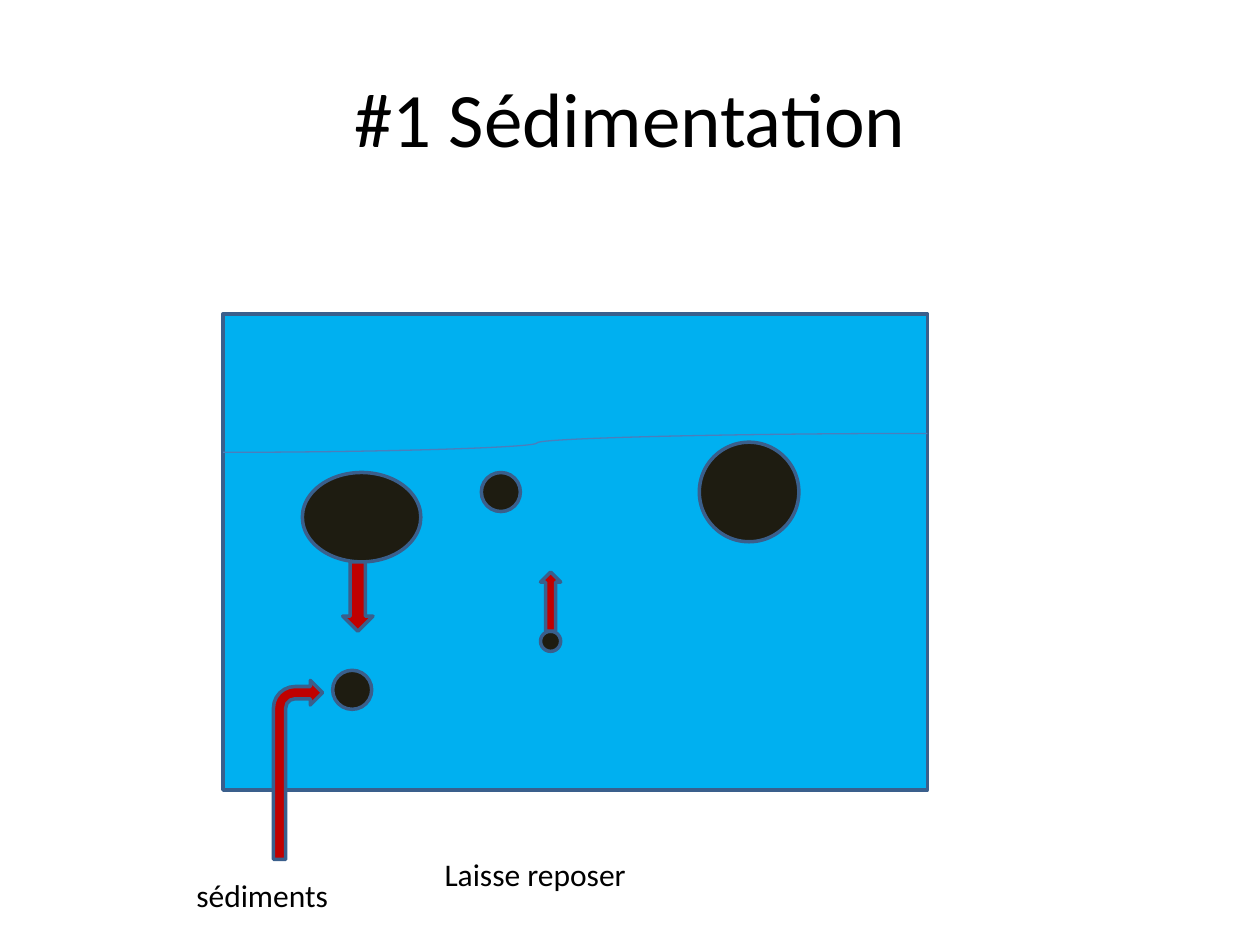
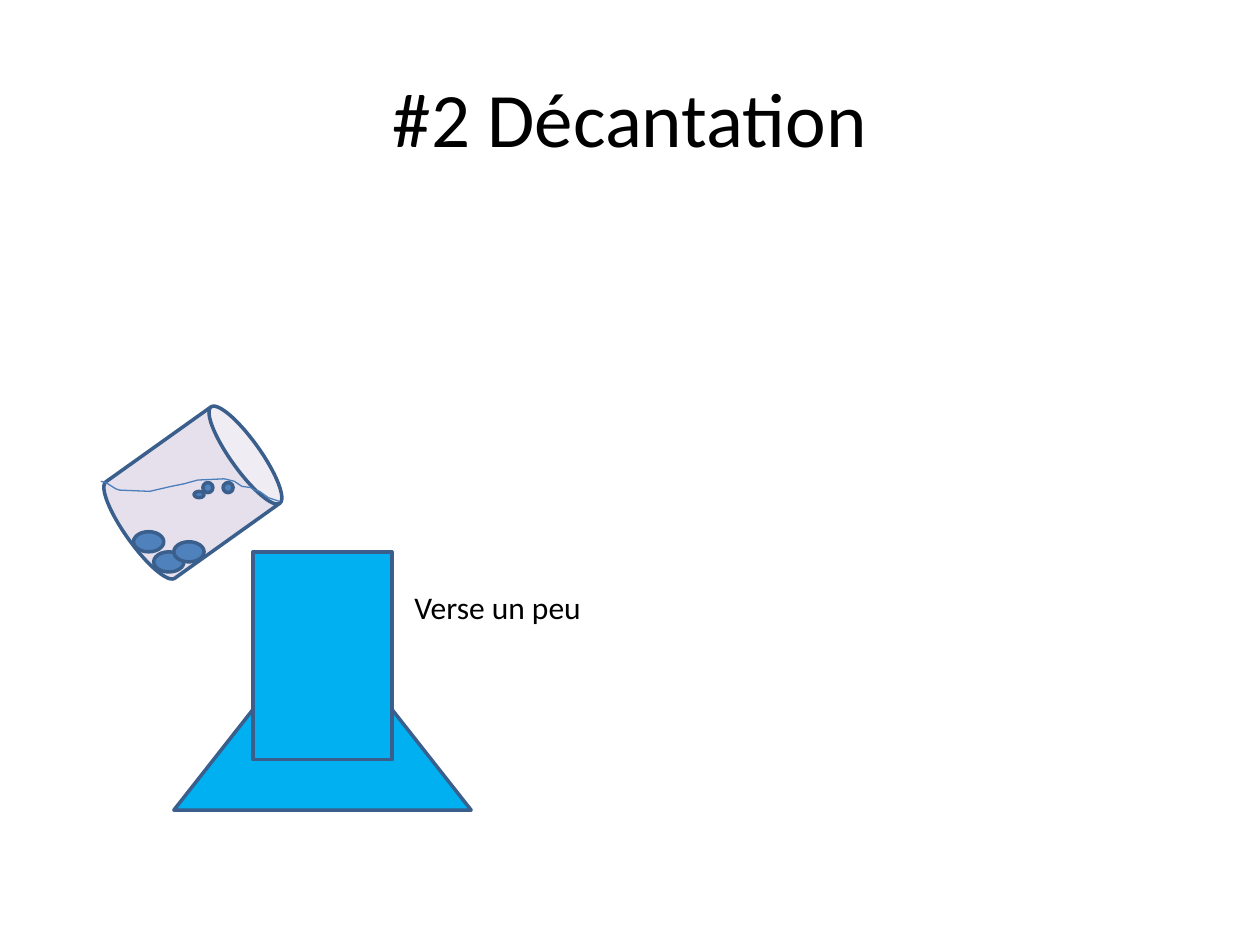
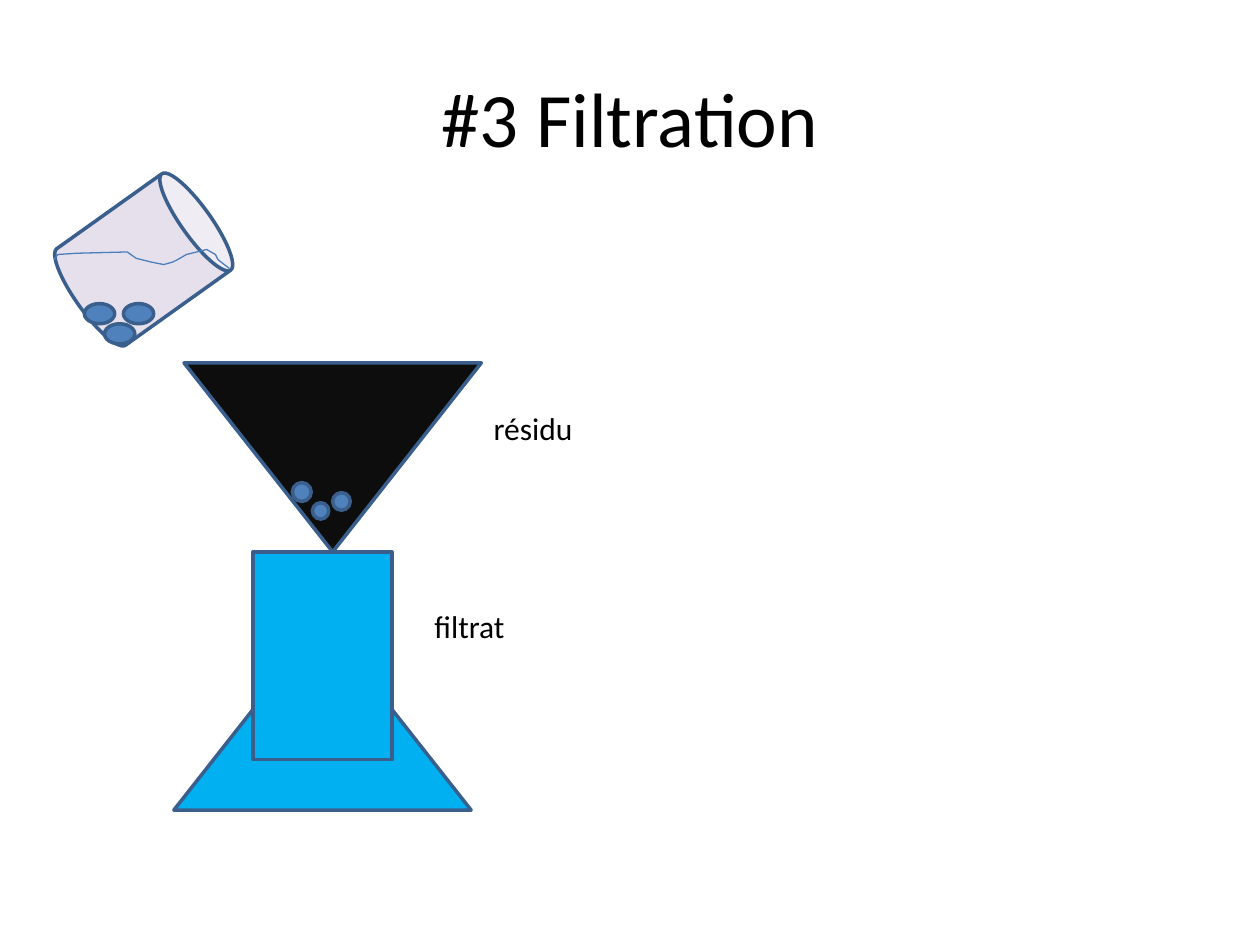
from lxml.etree import SubElement
from pptx import Presentation
from pptx.dml.color import RGBColor as RGB
from pptx.enum.shapes import MSO_CONNECTOR as Link, MSO_SHAPE as Form
from pptx.enum.text import MSO_ANCHOR as Anchor, MSO_AUTO_SIZE as Fit, PP_ALIGN as Align
from pptx.oxml.ns import qn
from pptx.util import Inches, Pt

INK = {"text": "000000", "edge": "3A5F8C", "wave": "4B7EBC", "water": "00B0F0",
       "mud": "1E1C11", "arrow": "C00000", "glass": "E6E0EC", "stone": "4F81BD",
       "filter": "0D0D0D"}
FONT = "Calibri"


def draw(slide, form, box, ink, turn=0):
    shape = slide.shapes.add_shape(form, *map(Inches, box))
    shape.shadow.inherit = False
    shape.fill.solid()
    shape.fill.fore_color.rgb = RGB.from_string(INK[ink])
    shape.line.color.rgb = RGB.from_string(INK["edge"])
    shape.line.width = Pt(2)
    shape.rotation = turn


def write(slide, box, text, size=18):
    frame = slide.shapes.add_textbox(*map(Inches, box)).text_frame
    frame.word_wrap = True
    frame.auto_size = Fit.SHAPE_TO_FIT_TEXT
    para = frame.paragraphs[0]
    para.text = text
    para.font.name = FONT
    para.font.size = Pt(size)
    para.font.color.rgb = RGB.from_string(INK["text"])
    return frame


deck = Presentation()
deck.slide_width, deck.slide_height = Inches(10), Inches(7.5)

# Titles
pages = []
for title in ("#1 Sédimentation", "#2 Décantation", "#3 Filtration"):
    page = deck.slides.add_slide(deck.slide_layouts[6])
    frame = write(page, (0.5, 0.3, 9, 1.25), title, 44)
    frame.auto_size = Fit.NONE
    frame.vertical_anchor = Anchor.MIDDLE
    frame.paragraphs[0].alignment = Align.CENTER
    pages.append(page)
settle, decant, sieve = pages

# Settling tank with its grains
draw(settle, Form.RECTANGLE, (1.77, 2.49, 5.59, 3.78), "water")
for box in ((2.4, 3.75, 0.94, 0.71), (2.64, 5.32, 0.31, 0.31), (3.82, 3.75, 0.31, 0.31),
            (4.29, 5.01, 0.16, 0.16), (5.55, 3.51, 0.79, 0.79)):
    draw(settle, Form.OVAL, box, "mud")

# Arrows for sinking, rising and sediment
for form, box in ((Form.DOWN_ARROW, (2.72, 4.46, 0.24, 0.55)),
                  (Form.UP_ARROW, (4.29, 4.54, 0.16, 0.47)),
                  (Form.BENT_ARROW, (2.17, 5.4, 0.39, 1.42))):
    draw(settle, form, box, "arrow")

# Water line of the tank
level = settle.shapes.add_connector(Link.CURVE, *map(Inches, (1.77, 3.59, 7.36, 3.44)))
level.line.color.rgb = RGB.from_string(INK["wave"])
level.line.width = Pt(0.75)
props = level._element.spPr
bends = props.find(qn("a:prstGeom")).find(qn("a:avLst"))
SubElement(bends, qn("a:gd"), name="adj1", fmla="val 44600")
SubElement(props, qn("a:effectLst"))

# Stand and tilted beaker: beaker corner, large stones, surface
pours = (
    (decant, (1.06, 3.28), ((1.22, 4.38), (1.38, 4.3), (1.06, 4.22)),
     ((2.22, 3.98), (2.13, 3.95), (2.06, 3.9), (2.02, 3.89), (1.99, 3.87), (1.92, 3.86),
      (1.86, 3.82), (1.78, 3.8), (1.57, 3.81), (1.46, 3.84), (1.36, 3.86), (1.23, 3.89),
      (1.19, 3.9), (0.95, 3.89), (0.92, 3.88), (0.84, 3.83), (0.8, 3.82))),
    (sieve, (0.67, 1.43), ((0.67, 2.41), (0.98, 2.41), (0.83, 2.57)),
     ((1.82, 2.13), (1.78, 2.1), (1.73, 2.06), (1.71, 2.02), (1.64, 1.98), (1.52, 2.01),
      (1.48, 2.02), (1.41, 2.06), (1.37, 2.08), (1.3, 2.1), (1.2, 2.08), (1.08, 2.05),
      (1.01, 2), (0.61, 2.01), (0.46, 2.02), (0.43, 2.06))),
)
for page, can, stones, crest in pours:
    draw(page, Form.ISOSCELES_TRIANGLE, (1.38, 4.93, 2.36, 1.5), "water")
    draw(page, Form.RECTANGLE, (2.01, 4.38, 1.1, 1.65), "water")
    draw(page, Form.CAN, (*can, 0.94, 1.26), "glass", 54.5)
    for spot in stones:
        draw(page, Form.OVAL, (*spot, 0.24, 0.16), "stone")
    start, *rest = [(Inches(x), Inches(y)) for x, y in crest]
    path = page.shapes.build_freeform(*start)
    path.add_line_segments(rest, close=False)
    wave = path.convert_to_shape()
    wave.shadow.inherit = False
    wave.fill.background()
    wave.line.color.rgb = RGB.from_string(INK["wave"])
    wave.line.width = Pt(0.75)

# Funnel, then the small grains
draw(sieve, Form.ISOSCELES_TRIANGLE, (1.46, 2.88, 2.36, 1.5), "filter", 180)
for page, box in ((decant, (1.61, 3.83, 0.08, 0.08)), (decant, (1.77, 3.83, 0.08, 0.08)),
                  (decant, (1.54, 3.9, 0.08, 0.05)), (sieve, (2.32, 3.83, 0.15, 0.15)),
                  (sieve, (2.64, 3.91, 0.14, 0.14)), (sieve, (2.48, 3.99, 0.13, 0.13))):
    draw(page, Form.OVAL, box, "stone")

# Labels
for page, x, y, width, text in ((settle, 1.46, 6.9, 1.73, "sédiments"),
                                (settle, 3.43, 6.74, 3.46, "Laisse reposer"),
                                (decant, 3.19, 4.62, 2.05, "Verse un peu"),
                                (sieve, 3.82, 3.2, 2.44, "résidu"),
                                (sieve, 3.35, 4.77, 2.44, "filtrat")):
    write(page, (x, y, width, 0.4), text)

deck.save("out.pptx")
